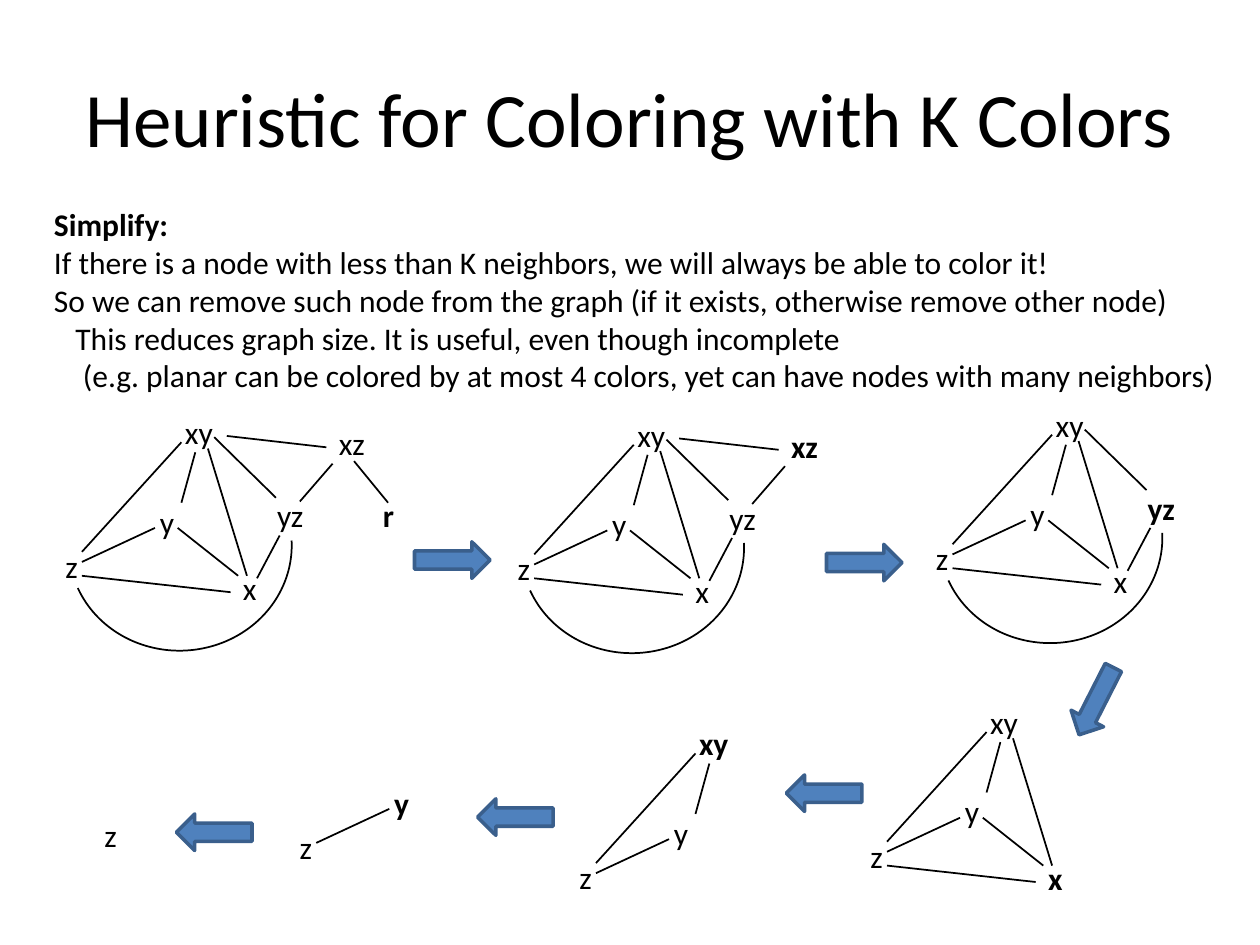
"""Build a slide on simplifying an interference graph, one node at a time."""
from lxml import etree
from pptx import Presentation
from pptx import util as u
from pptx.dml.color import RGBColor
from pptx.enum import shapes, text
from pptx.oxml.ns import qn

COLORS = {"ink": "000000", "arrow": "4F81BD", "arrow_edge": "3A5F8C"}
FONT = "Calibri"
COLS = 100

NODES = {
    "y": (7.5, 7.1, 3.8), "yz": (16.8, 6.6, 4.9), "x": (14.1, 12.4, 3.7),
    "z": (0, 10.6, 3.6), "xz": (21.7, 0.9, 4.9), "xy": (9.5, 0, 5),
    "r": (25.2, 6.6, 2.9),
}
EDGES = {
    ("xy", "x"): (12.3, 3.3, 15.4, 13.4), ("x", "z"): (14.1, 14.7, 2.3, 13.4),
    ("y", "x"): (9.9, 9.6, 14.7, 13.4), ("xy", "y"): (11.3, 3.6, 10.2, 7.6),
    ("z", "y"): (2.3, 12.3, 8.1, 9.6), ("xy", "z"): (10.2, 2.8, 2.3, 11.5),
    ("xy", "yz"): (12.8, 2.4, 17.7, 7.2), ("yz", "x"): (18, 10.2, 16.2, 13.6),
    ("xy", "xz"): (13.8, 2.3, 21.7, 3.2), ("xz", "yz"): (22.2, 4.5, 19.6, 7.5),
    ("xz", "r"): (23.9, 4.3, 26.6, 7.6),
}
ARC = (1.8, 2.2, 16.6, 17.7)
REMOVAL_ORDER = ["r", "xz", "yz", "x", "xy", "y", "z"]
GRAPH_ORIGINS = [(4.2, 32.3), (40.1, 32.5), (73.3, 31.7), (68.1, 55.3),
                 (45, 57), (22.8, 54.6), (7.3, 53.7)]
ARROWS = [(32.9, 43, 0), (65.6, 43.2, 0), (84, 54.2, 117),
          (62.4, 61.5, 180), (37.9, 63.4, 180), (14, 64.6, 180)]
LINES = [
    ("Simplify:", 0),
    ("If there is a node with less than K neighbors, we will always be able to color it!", 0),
    ("So we can remove such node from the graph (if it exists, otherwise remove other node)", 0),
    ("This reduces graph size. It is useful, even though incomplete", 1.7),
    ("(e.g. planar can be colored by at most 4 colors, yet can have nodes with many neighbors)", 2.3),
]


def grid(*units):
    """Turn grid columns or rows into lengths."""
    return [u.Inches(n * 10 / COLS) for n in units]


def color(name):
    """Look up a colour by its role."""
    return RGBColor.from_string(COLORS[name])


def style_font(font, size, bold=False):
    """Apply the slide's typeface to a font."""
    font.name, font.size, font.bold = FONT, u.Pt(size), bold
    font.color.rgb = color("ink")


def style_line(line, name, width):
    """Set the colour and width of a line."""
    line.color.rgb, line.width = color(name), u.Pt(width)


def add_title(s, box):
    """Fill the title placeholder and place it in the box."""
    sp = s.shapes.title
    sp.left, sp.top, sp.width, sp.height = grid(*box)
    sp.text_frame.text = "Heuristic for Coloring with K Colors"
    style_font(sp.text_frame.paragraphs[0].font, 44)


def add_explanation(s, box):
    """Write the explanation with its indented remarks."""
    tf = s.shapes.add_textbox(*grid(*box)).text_frame
    tf.word_wrap = True
    for i, (line, indent) in enumerate(LINES):
        p = tf.add_paragraph() if i else tf.paragraphs[0]
        p.text = line
        style_font(p.font, 18, bold=i == 0)
        if indent:
            p._p.get_or_add_pPr().set("marL", str(grid(indent)[0]))


def add_node(parent, left, top, name, bold):
    """Label one node of a graph."""
    x, y, width = NODES[name]
    tf = parent.shapes.add_textbox(*grid(left + x, top + y, width, 4)).text_frame
    tf.word_wrap = False
    tf.auto_size = text.MSO_AUTO_SIZE.SHAPE_TO_FIT_TEXT
    p = tf.paragraphs[0]
    p.text = name
    style_font(p.font, 18, bold)


def add_edge(parent, left, top, ends):
    """Draw one straight edge of a graph."""
    x1, y1, x2, y2 = ends
    line = parent.shapes.add_connector(
        shapes.MSO_CONNECTOR.STRAIGHT,
        *grid(left + x1, top + y1, left + x2, top + y2))
    style_line(line.line, "ink", 1)
    etree.SubElement(line._element.spPr, qn("a:effectLst"))


def add_arc(parent, left, top):
    """Draw the curved edge between z and yz."""
    x, y, width, height = ARC
    sp = parent.shapes.add_shape(shapes.MSO_SHAPE.ARC,
                                 *grid(left + x, top + y, width, height))
    sp.adjustments[0], sp.adjustments[1] = 162, 42.39
    sp.rotation = 87.1
    sp.shadow.inherit = False
    sp.fill.background()
    style_line(sp.line, "ink", 1)


def add_graph(s, left, top, names):
    """Draw the graph on the remaining nodes, the next to go in bold."""
    alone = len(names) == 1
    parent = s if alone else s.shapes.add_group_shape()
    for name in names:
        add_node(parent, left, top, name, bold=name == names[0] and not alone)
    for pair, ends in EDGES.items():
        if set(pair) <= set(names):
            add_edge(parent, left, top, ends)
    if {"z", "yz"} <= set(names):
        add_arc(parent, left, top)


def add_arrow(s, left, top, angle):
    """Draw a block arrow to the next step."""
    sp = s.shapes.add_shape(shapes.MSO_SHAPE.RIGHT_ARROW, *grid(left, top, 6, 2.9))
    sp.rotation = angle
    sp.shadow.inherit = False
    sp.fill.solid()
    sp.fill.fore_color.rgb = color("arrow")
    style_line(sp.line, "arrow_edge", 2)


def main():
    """Build and save the slide."""
    prs = Presentation()
    prs.slide_width, prs.slide_height = u.Inches(10), u.Inches(7.5)
    s = prs.slides.add_slide(prs.slide_layouts[5])
    add_title(s, (5, 3, 90, 12.5))
    add_explanation(s, (3.3, 15.8, 95.8, 16.2))
    for step, (left, top) in enumerate(GRAPH_ORIGINS):
        add_graph(s, left, top, REMOVAL_ORDER[step:])
    for arrow in ARROWS:
        add_arrow(s, *arrow)
    prs.save("out.pptx")


if __name__ == "__main__":
    main()
